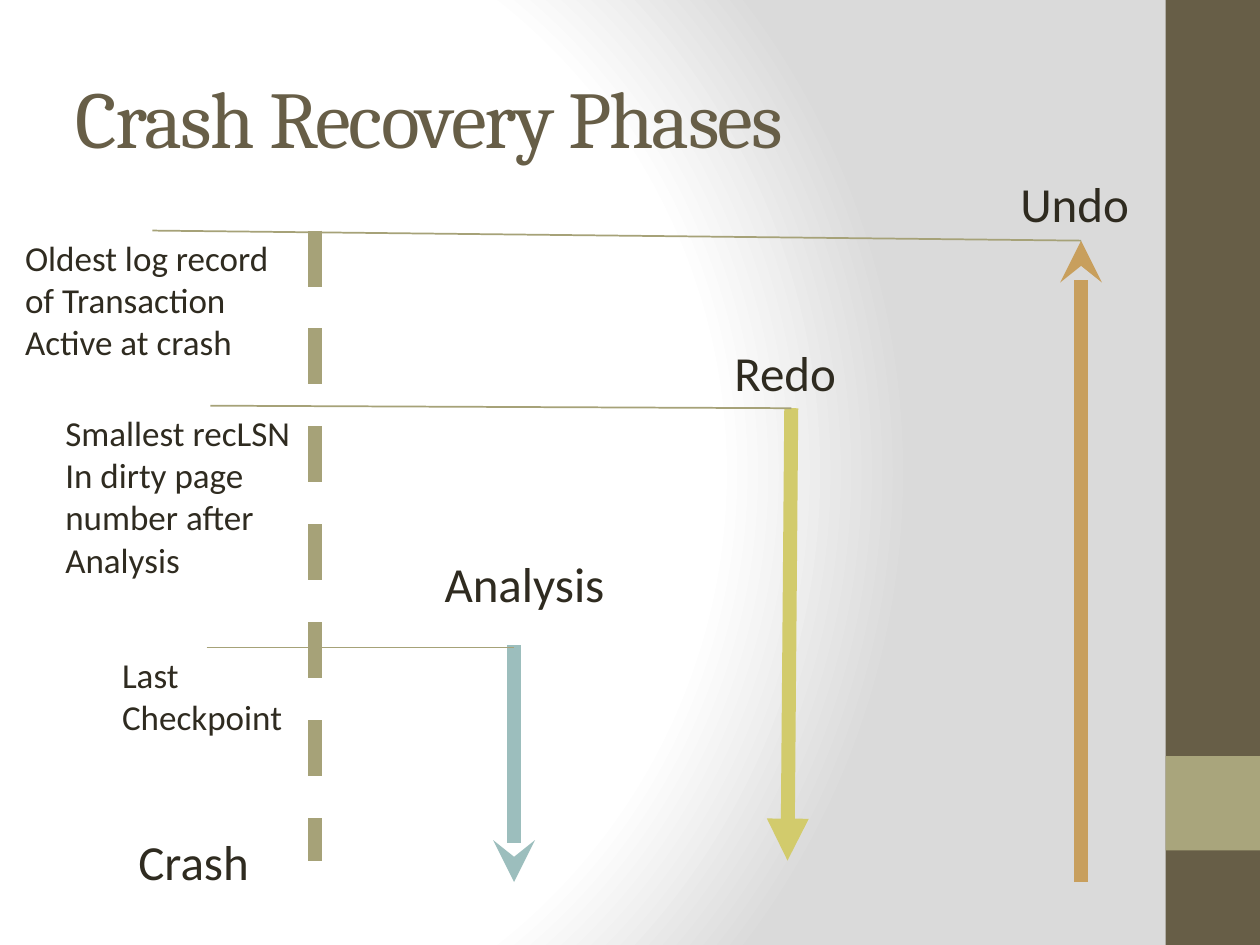
from lxml.etree import SubElement
from pptx import Presentation
from pptx.dml.color import RGBColor
from pptx.enum.dml import MSO_LINE_DASH_STYLE as Dash
from pptx.enum.shapes import MSO_CONNECTOR as Connector, MSO_SHAPE as Shape
from pptx.enum.text import MSO_ANCHOR as Anchor, MSO_AUTO_SIZE as AutoSize, PP_ALIGN as Align
from pptx.oxml import parse_xml
from pptx.oxml.ns import nsdecls, qn
from pptx.util import Inches, Pt

BROWN = RGBColor(0x67, 0x5E, 0x47)
SAGE = RGBColor(0xA9, 0xA5, 0x7C)
OLIVE = RGBColor(0xA6, 0xA2, 0x78)
TEAL = RGBColor(0x9C, 0xBE, 0xBD)
LIME = RGBColor(0xD2, 0xCB, 0x6C)
OCHRE = RGBColor(0xC8, 0x9F, 0x5D)
INK = RGBColor(0x2F, 0x2B, 0x20)

prs = Presentation()
prs.slide_width, prs.slide_height = Inches(10), Inches(7.5)
slide = prs.slides.add_slide(prs.slide_layouts[5])

# Columns of the phases and rows of the log positions, in inches
LOG_X, ANALYSIS_X, REDO_X, UNDO_X = 2.5, 4.08, 6.28, 8.58
OLDEST_Y, SMALLEST_Y, CHECKPOINT_Y = 1.83, 3.22, 5.14
LOG_END_Y, CRASH_Y = 6.83, 7


def add_line(start, end, color, width, arrow=None, dash=None):
    line = slide.shapes.add_connector(
        Connector.STRAIGHT, *(Inches(v) for v in (*start, *end)))
    line.line.color.rgb = color
    line.line.width = Pt(width)
    if dash:
        line.line.dash_style = dash
    properties = line._element.spPr
    if arrow:
        SubElement(properties.find(qn("a:ln")), qn("a:tailEnd"), type=arrow)
    SubElement(properties, qn("a:effectLst"))


def add_label(left, top, width, height, lines, size, wrap=False):
    box = slide.shapes.add_textbox(*(Inches(v) for v in (left, top, width, height)))
    frame = box.text_frame
    frame.word_wrap = wrap
    frame.auto_size = AutoSize.SHAPE_TO_FIT_TEXT
    frame.text = "\n".join(lines)
    for paragraph in frame.paragraphs:
        font = paragraph.runs[0].font
        font.name, font.size, font.color.rgb = "Calibri", Pt(size), INK


# Background: white glow fading to grey
slide.element.cSld.insert(0, parse_xml(f"""
<p:bg {nsdecls("p", "a")}><p:bgPr><a:gradFill rotWithShape="1"><a:gsLst>
  <a:gs pos="0"><a:srgbClr val="FFFFFF"/></a:gs>
  <a:gs pos="75000"><a:srgbClr val="FFFFFF"/></a:gs>
  <a:gs pos="100000"><a:srgbClr val="DADADA"/></a:gs>
</a:gsLst><a:path path="circle">
  <a:fillToRect l="20000" t="50000" r="100000" b="50000"/>
</a:path></a:gradFill><a:effectLst/></p:bgPr></p:bg>"""))

# Side band with its accent square
for top, height, color in ((0, 7.5, BROWN), (6, 0.75, SAGE)):
    band = slide.shapes.add_shape(
        Shape.RECTANGLE, Inches(9.25), Inches(top), Inches(0.75), Inches(height))
    band.shadow.inherit = False
    band.fill.solid()
    band.fill.fore_color.rgb = color
    band.line.fill.background()

# Title
title = slide.shapes.title
title.left, title.top = Inches(0.5), Inches(0.3)
title.width, title.height = Inches(8.33), Inches(1.25)
title.text_frame.text = "Crash Recovery Phases"
title.text_frame.vertical_anchor = Anchor.MIDDLE
heading = title.text_frame.paragraphs[0]
heading.alignment = Align.LEFT
heading_font = heading.runs[0].font
heading_font.name, heading_font.size = "Cambria", Pt(46)
heading_font.color.rgb = BROWN
heading.runs[0]._r.get_or_add_rPr().set("spc", "-100")

# Log and the three phase arrows
add_line((LOG_X, OLDEST_Y), (LOG_X, LOG_END_Y), OLIVE, 8, dash=Dash.DASH)
for start, tip, color, arrow in (
    ((ANALYSIS_X, 5.12), (ANALYSIS_X, CRASH_Y), TEAL, "stealth"),
    ((UNDO_X, CRASH_Y), (UNDO_X, 1.91), OCHRE, "stealth"),
    ((REDO_X, 3.24), (6.25, LOG_END_Y), LIME, "triangle"),
):
    add_line(start, tip, color, 8, arrow=arrow)

# Phase names and the crash point
for left, top, width, name in (
    (3.43, 4.34, 1.57, "Analysis"),
    (5.73, 2.67, 1.11, "Redo"),
    (8, 1.33, 1.16, "Undo"),
    (1, 6.55, 1.18, "Crash"),
):
    add_label(left, top, width, 0.57, [name], 28)

# Log positions where the phases begin or end
add_label(0.87, CHECKPOINT_Y, 1.55, 0.77, ["Last", "Checkpoint"], 20)
add_label(0.42, SMALLEST_Y, 2.5, 1.45,
          ["Smallest recLSN", "In dirty page number after", "Analysis"], 20, wrap=True)
add_label(0.1, OLDEST_Y, 2.22, 1.11,
          ["Oldest log record", "of Transaction", "Active at crash"], 20)

# Thin lines from each log position to its phase
for start, end in (
    ((1.64, CHECKPOINT_Y), (ANALYSIS_X, CHECKPOINT_Y)),
    ((1.67, SMALLEST_Y), (REDO_X, 3.24)),
    ((1.21, OLDEST_Y), (UNDO_X, 1.91)),
):
    add_line(start, end, OLIVE, 1)

prs.save("out.pptx")
